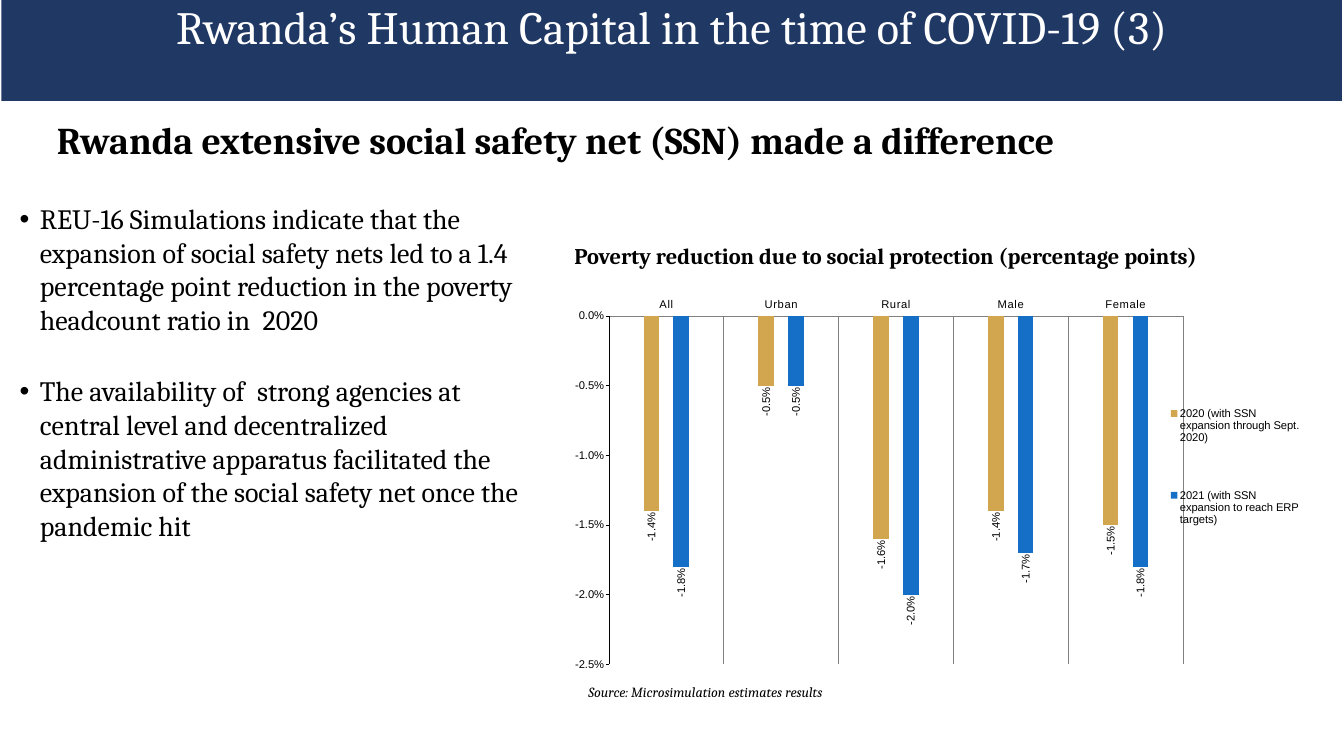
from pptx import Presentation
from pptx import util as u
from pptx.chart.data import CategoryChartData
from pptx.dml.color import RGBColor
from pptx.enum import chart as charts, text as texts
from pptx.oxml import parse_xml
from pptx.oxml.ns import nsdecls, qn

COLOURS = {"navy": "203864", "white": "FFFFFF", "black": "000000",
           "grey": "808080", "gold": "D2A64E", "blue": "166FC6"}
SERIF, SANS = "Cambria", "Arial"

GROUPS = ["All", "Urban", "Rural", "Male", "Female"]
SERIES = [
    ("2020 (with SSN expansion through Sept. 2020)", "gold",
     [-0.014, -0.005, -0.016, -0.014, -0.015]),
    ("2021 (with SSN expansion to reach ERP targets)", "blue",
     [-0.018, -0.005, -0.02, -0.017, -0.018]),
]
FINDINGS = [
    "REU-16 Simulations indicate that the expansion of social safety nets led to "
    "a 1.4 percentage point reduction in the poverty headcount ratio in\u00a0 2020",
    "The availability of  strong agencies at central level and decentralized "
    "administrative apparatus facilitated the expansion of the social safety net "
    "once the pandemic hit",
]


def colour(name):
    return RGBColor.from_string(COLOURS[name])


def place(box, left, top, width, height):
    box.left, box.top = u.Pt(left), u.Pt(top)
    box.width, box.height = u.Pt(width), u.Pt(height)


def set_frame(box, inset_x, inset_y, anchor, wrap=True):
    frame = box.text_frame
    frame.auto_size = texts.MSO_AUTO_SIZE.NONE
    frame.word_wrap = wrap
    frame.vertical_anchor = anchor
    frame.margin_left = frame.margin_right = u.Pt(inset_x)
    frame.margin_top = frame.margin_bottom = u.Pt(inset_y)
    return frame


def write(para, content, size, tint="black", bold=False, italic=False,
          align=texts.PP_ALIGN.LEFT, line=1.0, after=0, margin=0, bullet=False):
    """Fill one paragraph; a bullet hangs to the left of the margin."""
    span = para.add_run()
    span.text = content
    span.font.name, span.font.size = SERIF, u.Pt(size)
    span.font.bold, span.font.italic = bold, italic
    span.font.color.rgb = colour(tint)
    para.alignment, para.line_spacing = align, line
    para.space_before, para.space_after = u.Pt(0), u.Pt(after)
    props = para._p.get_or_add_pPr()
    props.set("marL", str(u.Pt(margin)))
    props.set("indent", str(u.Pt(-margin if bullet else 0)))
    if bullet:
        props.append(parse_xml(f'<a:buFont {nsdecls("a")} typeface="{SANS}"/>'))
        props.append(parse_xml(f'<a:buChar {nsdecls("a")} char="•"/>'))


def add_label(page, bounds, content, size, inset=4.5,
              anchor=texts.MSO_ANCHOR.MIDDLE, wrap=True, **style):
    box = page.shapes.add_textbox(*map(u.Pt, bounds))
    frame = set_frame(box, inset, inset, anchor, wrap)
    write(frame.paragraphs[0], content, size, **style)


def format_font(font):
    font.name, font.size, font.bold = SANS, u.Pt(16), False
    font.color.rgb = colour("black")


def format_line(line, tint):
    line.color.rgb = colour(tint)
    line.width = u.Pt(0.75)


def manual_layout(x, y, width, height, inner=False):
    target = '<c:layoutTarget val="inner"/>' if inner else ""
    return parse_xml(
        f'<c:layout {nsdecls("c")}><c:manualLayout>{target}'
        f'<c:xMode val="edge"/><c:yMode val="edge"/><c:x val="{x}"/><c:y val="{y}"/>'
        f'<c:w val="{width}"/><c:h val="{height}"/></c:manualLayout></c:layout>')


def format_axes(chart):
    groups, values = chart.category_axis, chart.value_axis
    groups.tick_label_position = charts.XL_TICK_LABEL_POSITION.HIGH
    groups.major_tick_mark = charts.XL_TICK_MARK.NONE
    groups.has_major_gridlines = True
    format_line(groups.major_gridlines.format.line, "grey")
    format_line(groups.format.line, "grey")
    values.minimum_scale, values.maximum_scale, values.major_unit = -0.025, 0, 0.005
    values.has_major_gridlines = False
    values.major_tick_mark = charts.XL_TICK_MARK.OUTSIDE
    values.tick_labels.number_format = "0.0%"
    values.tick_labels.number_format_is_linked = False
    format_line(values.format.line, "black")
    for axis in (groups, values):
        axis.minor_tick_mark = charts.XL_TICK_MARK.NONE
        format_font(axis.tick_labels.font)
    # Slightly spaced letters in the group names
    for props in groups._element.xpath("c:txPr/a:p/a:pPr/a:defRPr"):
        props.set("spc", "100")


def format_series(series, tint):
    series.invert_if_negative = False
    series.format.fill.solid()
    series.format.fill.fore_color.rgb = colour(tint)
    labels = series.data_labels
    labels.show_value = True
    labels.number_format, labels.number_format_is_linked = "0.0%", False
    labels.position = charts.XL_LABEL_POSITION.OUTSIDE_END
    format_font(labels.font)
    body = labels._element.xpath("c:txPr/a:bodyPr")[0]
    body.set("rot", "-5400000")
    body.set("vert", "horz")


def add_poverty_chart(page, bounds):
    data = CategoryChartData(number_format="0.0%")
    data.categories = GROUPS
    for name, _, values in SERIES:
        data.add_series(name, values)
    chart = page.shapes.add_chart(charts.XL_CHART_TYPE.COLUMN_CLUSTERED,
                                  *map(u.Pt, bounds), data).chart
    chart.has_title = False
    format_font(chart.font)
    plot = chart.plots[0]
    plot.gap_width, plot.overlap, plot.vary_by_categories = 444, -90, False
    for series, (_, tint, _) in zip(plot.series, SERIES):
        format_series(series, tint)
    format_axes(chart)

    # Legend and plot area positions
    chart.has_legend = True
    legend = chart.legend
    legend.position = charts.XL_LEGEND_POSITION.RIGHT
    legend.include_in_layout = False
    format_font(legend.font)
    area = chart._chartSpace.chart.plotArea
    for element in (area, legend._element):
        for old in element.findall(qn("c:layout")):
            element.remove(old)
    area.insert(0, manual_layout(0.06, 0.08, 0.77, 0.9, inner=True))
    legend._element.find(qn("c:legendPos")).addnext(
        manual_layout(0.81, 0.2, 0.18, 0.54))


def main():
    deck = Presentation()
    deck.slide_width, deck.slide_height = u.Pt(1920), u.Pt(1080)
    page = deck.slides.add_slide(deck.slide_layouts[1])
    title, body = page.placeholders

    # Title banner
    place(title, 2, 0, 1915, 144)
    title.fill.solid()
    title.fill.fore_color.rgb = colour("navy")
    frame = set_frame(title, 14.4, 7.2, texts.MSO_ANCHOR.TOP)
    write(frame.paragraphs[0], "Rwanda’s Human Capital in the time of COVID-19 (3)",
          66, tint="white", align=texts.PP_ALIGN.CENTER, line=0.9)

    # Headline and findings
    add_label(page, (2, 170, 1837, 70),
              "Rwanda extensive social safety net (SSN) made a difference", 54,
              inset=7.2, anchor=texts.MSO_ANCHOR.TOP, bold=True, line=0.85, margin=72)
    place(body, 21, 281, 747, 505)
    frame = set_frame(body, 7.2, 7.2, texts.MSO_ANCHOR.TOP)
    for index, finding in enumerate(FINDINGS):
        para = frame.add_paragraph() if index else frame.paragraphs[0]
        write(para, finding, 40, after=54, margin=28.8, bullet=True)

    # Chart with its heading and source
    add_label(page, (816, 342, 1023, 47),
              "Poverty reduction due to social protection (percentage points)",
              32, bold=True)
    add_poverty_chart(page, (806, 407, 1065, 553))
    add_label(page, (836, 973, 356, 32), "Source: Microsimulation estimates results",
              20, italic=True, wrap=False)

    deck.save("out.pptx")


if __name__ == "__main__":
    main()
